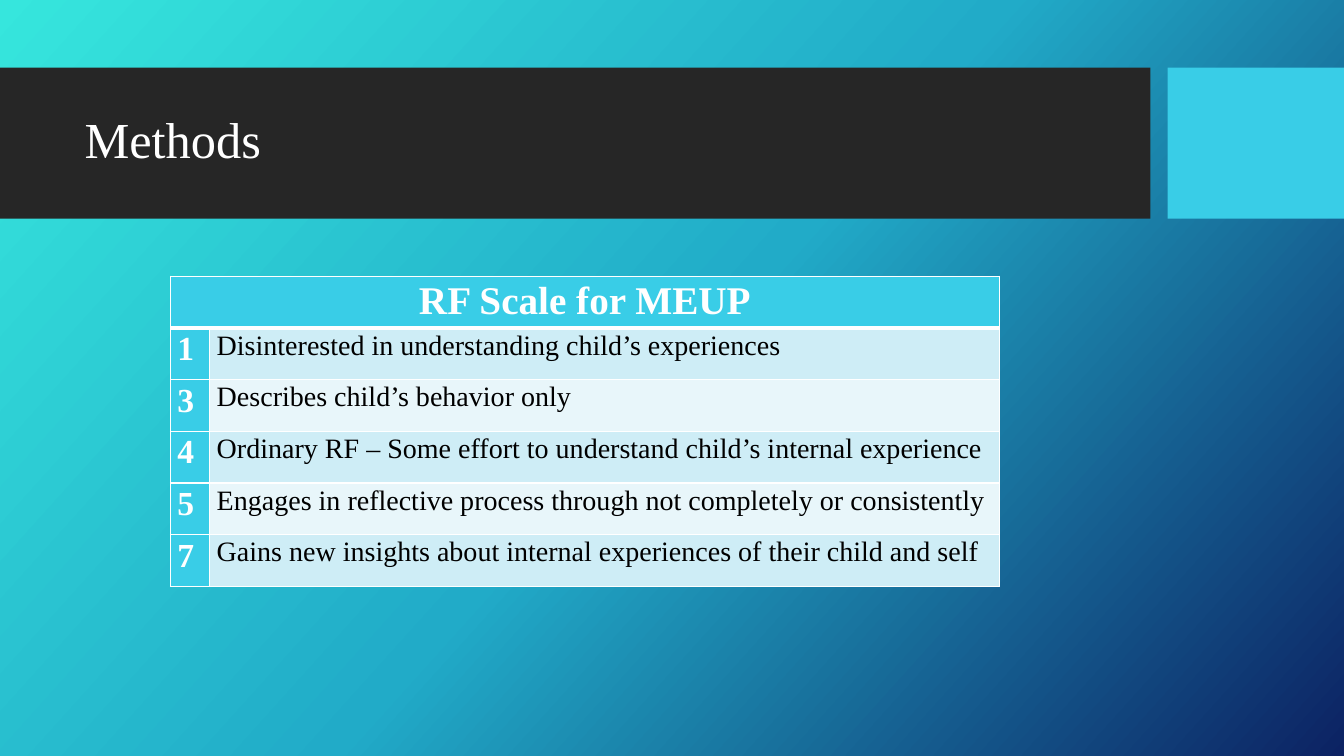
import copy
from dataclasses import dataclass

import pptx
import pptx.dml.color
import pptx.enum.shapes
import pptx.enum.text
import pptx.oxml
import pptx.oxml.ns
import pptx.util
from pptx.util import Inches

FONT = "Times New Roman"
WHITE = "FFFFFF"
BLACK = "000000"
CYAN = "39CDE7"
CHARCOAL = "262626"
BAND_FILLS = ("CEEDF6", "E8F6FA")
BACKGROUND_STOPS = ((0, "36E6DD"), (0.5, "21ABC8"), (1, "0C2263"))
COLUMN_WIDTHS = (0.39, 7.83)
TABLE_HEIGHT = 3.08


@dataclass
class Bar:
    left: float
    width: float
    fill: str


@dataclass
class Level:
    score: str
    meaning: str


BARS = (Bar(0, 11.41, CHARCOAL), Bar(11.58, 1.75, CYAN))
LEVELS = (
    Level("1", "Disinterested in understanding child’s experiences"),
    Level("3", "Describes child’s behavior only"),
    Level("4", "Ordinary RF – Some effort to understand child’s internal experience"),
    Level("5", "Engages in reflective process through not completely or consistently"),
    Level("7", "Gains new insights about internal experiences of their child and self"),
)


def color(value: str) -> pptx.dml.color.RGBColor:
    return pptx.dml.color.RGBColor.from_string(value)


def write(frame, text: str, *, size: float, ink: str = WHITE, bold: bool = False,
          spacing: float = 1.07, align=pptx.enum.text.PP_ALIGN.LEFT) -> None:
    para = frame.paragraphs[0]
    para.alignment = align
    para.line_spacing = spacing
    span = para.add_run()
    span.text = text
    span.font.name = FONT
    span.font.size = pptx.util.Pt(size)
    span.font.bold = bold
    span.font.color.rgb = color(ink)


def paint_background(page) -> None:
    fill = page.background.fill
    fill.gradient()
    stops = page._element.find(".//" + pptx.oxml.ns.qn("a:gsLst"))
    stops.insert(1, copy.deepcopy(stops[0]))
    for stop, (position, value) in zip(fill.gradient_stops, BACKGROUND_STOPS):
        stop.position = position
        stop.color.rgb = color(value)
    fill.gradient_angle = 360 - 42


def draw_bar(page, bar: Bar) -> None:
    box = page.shapes.add_shape(
        pptx.enum.shapes.MSO_SHAPE.RECTANGLE,
        Inches(bar.left), Inches(0.67), Inches(bar.width), Inches(1.5))
    box.shadow.inherit = False
    box.fill.solid()
    box.fill.fore_color.rgb = color(bar.fill)
    box.line.fill.background()


def draw_title(page) -> None:
    box = page.shapes.add_textbox(Inches(0.74), Inches(0.82), Inches(10.51), Inches(1.18))
    box.text_frame.word_wrap = True
    box.text_frame.vertical_anchor = pptx.enum.text.MSO_ANCHOR.MIDDLE
    write(box.text_frame, "Methods", size=36, spacing=0.9)


def format_cell(cell, fill: str, top: int = 1, bottom: int = 1) -> None:
    cell.margin_left = cell.margin_right = Inches(0.07)
    cell.margin_top = cell.margin_bottom = 0
    cell.fill.solid()
    cell.fill.fore_color.rgb = color(fill)
    properties = cell._tc.get_or_add_tcPr()
    for index, (side, points) in enumerate(zip("LRTB", (1, 1, top, bottom))):
        properties.insert(index, pptx.oxml.parse_xml(
            f'<a:ln{side} {pptx.oxml.ns.nsdecls("a")} w="{pptx.util.Pt(points)}">'
            f'<a:solidFill><a:srgbClr val="{WHITE}"/></a:solidFill></a:ln{side}>'))


def draw_scale(page) -> None:
    table = page.shapes.add_table(
        len(LEVELS) + 1, len(COLUMN_WIDTHS), Inches(1.69), Inches(2.74),
        Inches(sum(COLUMN_WIDTHS)), Inches(TABLE_HEIGHT)).table
    for column, width in zip(table.columns, COLUMN_WIDTHS):
        column.width = Inches(width)
    header = table.cell(0, 0)
    header.merge(table.cell(0, 1))
    for column in range(len(COLUMN_WIDTHS)):
        format_cell(table.cell(0, column), CYAN, bottom=3)
    write(header.text_frame, "RF Scale for MEUP", size=28, bold=True,
          align=pptx.enum.text.PP_ALIGN.CENTER)
    for row, level in enumerate(LEVELS, start=1):
        score, meaning = table.cell(row, 0), table.cell(row, 1)
        top = 3 if row == 1 else 1
        format_cell(score, CYAN, top=top)
        format_cell(meaning, BAND_FILLS[(row - 1) % 2], top=top)
        write(score.text_frame, level.score, size=24, bold=True)
        write(meaning.text_frame, level.meaning, size=20, ink=BLACK)


def main() -> None:
    deck = pptx.Presentation()
    deck.slide_width = Inches(13.33)
    deck.slide_height = Inches(7.5)
    page = deck.slides.add_slide(deck.slide_layouts[6])
    paint_background(page)
    for bar in BARS:
        draw_bar(page, bar)
    draw_title(page)
    draw_scale(page)
    deck.save("out.pptx")


if __name__ == "__main__":
    main()
